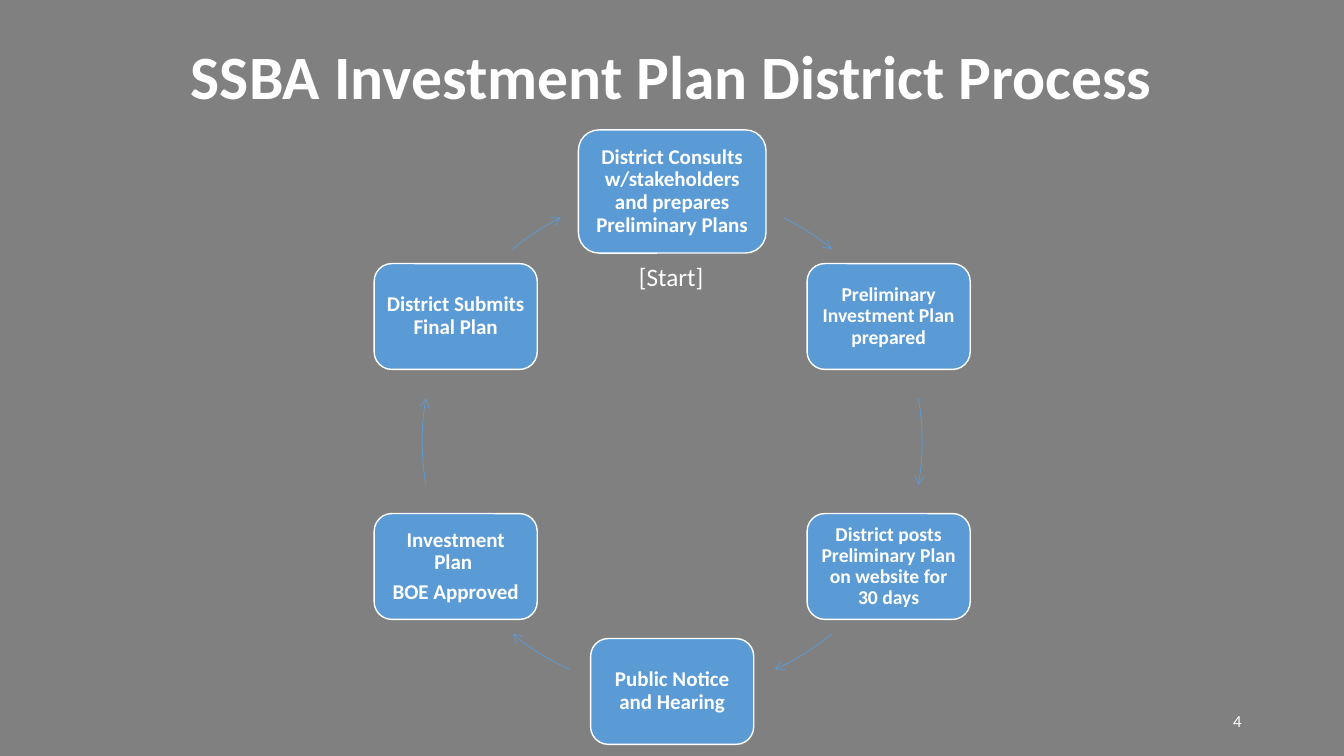
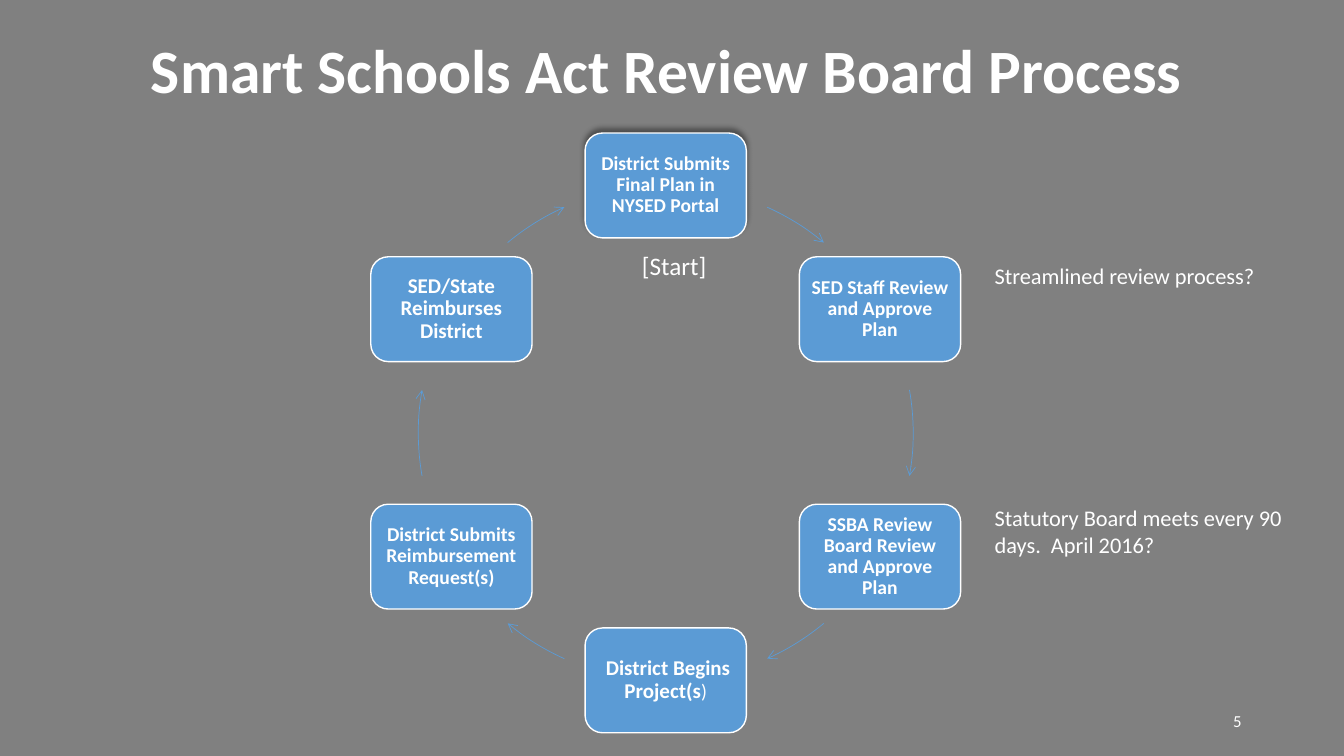
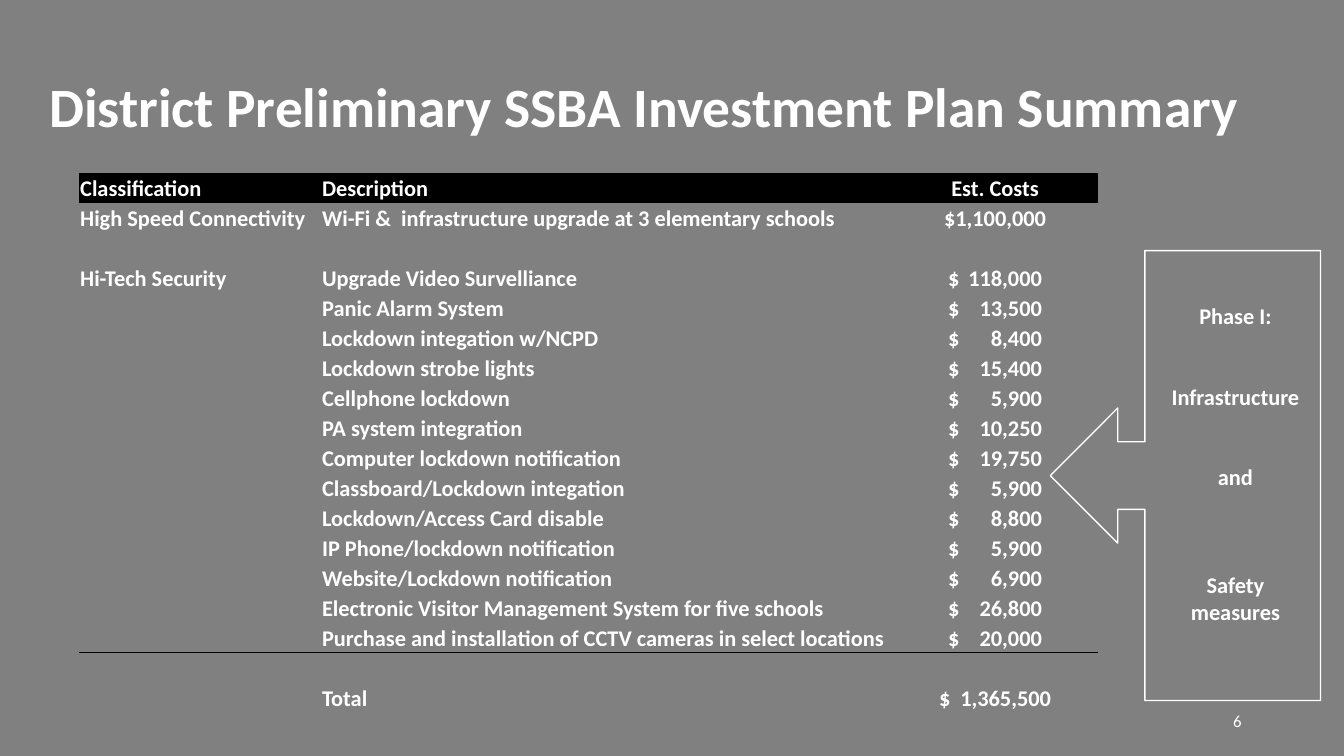
from dataclasses import dataclass
from math import cos, radians, sin

from lxml import etree
from pptx import Presentation
from pptx.dml.color import RGBColor
from pptx.enum.shapes import MSO_SHAPE
from pptx.enum.text import MSO_ANCHOR, PP_ALIGN
from pptx.oxml.ns import qn
from pptx.util import Pt

ARC = MSO_SHAPE.ARC
CALLOUT = MSO_SHAPE.LEFT_ARROW_CALLOUT
ROUNDED = MSO_SHAPE.ROUNDED_RECTANGLE
LEFT, CENTER, RIGHT = PP_ALIGN.LEFT, PP_ALIGN.CENTER, PP_ALIGN.RIGHT
TOP, MIDDLE, BOTTOM = MSO_ANCHOR.TOP, MSO_ANCHOR.MIDDLE, MSO_ANCHOR.BOTTOM
PLAIN_TABLE = "{2D5ABB26-0587-4C30-8999-92F81FD0307C}"


@dataclass(frozen=True)
class Theme:
    """Colours and type sizes shared by the slides."""

    font: str = "Calibri"
    ground: RGBColor = RGBColor(0x80, 0x80, 0x80)
    ink: RGBColor = RGBColor(0xFF, 0xFF, 0xFF)
    accent: RGBColor = RGBColor(0x5B, 0x9B, 0xD5)
    rule: RGBColor = RGBColor(0, 0, 0)
    title: float = 44
    title_small: float = 39.6
    label: float = 18
    body: float = 16
    step: float = 15
    step_small: float = 14
    number: float = 12
    tight: float = 0.9


THEME = Theme()

DISTRICT_STEPS = [
    (["District Consults w/stakeholders and prepares Preliminary Plans"], THEME.step),
    (["Preliminary Investment Plan prepared"], THEME.step_small),
    (["District posts Preliminary Plan on website for 30 days"], THEME.step_small),
    (["Public Notice and Hearing"], THEME.step),
    (["Investment Plan ", "BOE Approved"], THEME.step),
    (["District Submits Final Plan"], THEME.step),
]
BOARD_STEPS = [
    (["District Submits Final Plan in NYSED Portal"], THEME.step_small),
    (["SED Staff Review and Approve Plan"], THEME.step_small),
    (["SSBA Review Board Review and Approve Plan"], THEME.step_small),
    ([[(" ", {}), ("District Begins Project(s", {}),
       (")", {"size": Pt(THEME.step_small), "bold": False})]], THEME.step),
    (["District Submits Reimbursement Request(s)"], THEME.step_small),
    (["SED/State Reimburses District"], THEME.step),
]
COSTS = [
    ("Classification", "Description", "Est. Costs"),
    ("High Speed Connectivity", "Wi-Fi &  infrastructure upgrade at 3 elementary schools",
     "$1,100,000"),
    ("", "", ""),
    ("Hi-Tech Security", "Upgrade Video Survelliance", "$\t118,000"),
    ("", "Panic Alarm System", "$\t13,500"),
    ("", "Lockdown integation w/NCPD", "$\t8,400"),
    ("", "Lockdown strobe lights", "$\t15,400"),
    ("", "Cellphone lockdown", "$\t5,900"),
    ("", "PA system integration", "$\t10,250"),
    ("", "Computer lockdown notification", "$\t19,750"),
    ("", "Classboard/Lockdown integation", "$\t5,900"),
    ("", "Lockdown/Access Card disable", "$\t8,800"),
    ("", "IP Phone/lockdown notification", "$\t5,900"),
    ("", "Website/Lockdown notification", "$\t6,900"),
    ("", "Electronic Visitor Management System for five schools", "$\t26,800"),
    ("", "Purchase and installation of CCTV cameras in select locations", "$\t20,000"),
    ("", "", ""),
    ("", "Total", "$\t1,365,500"),
]


def apply(target, formats):
    """Set each named attribute of the target."""
    for name, value in formats.items():
        setattr(target, name, value)


def add_xml(parent, tag, **attributes):
    """Append a drawing element with the given attributes."""
    values = {name: str(value) for name, value in attributes.items()}
    return etree.SubElement(parent, qn(tag), values)


def write(frame, paras, size, bold=False, align=LEFT, anchor=TOP,
          spacing=1.0, gaps=(), **frame_formats):
    """Write paragraphs, each a string or a list of spans, into a text frame."""
    apply(frame, {"word_wrap": True, "vertical_anchor": anchor, **frame_formats})
    for index, content in enumerate(paras):
        para = frame.paragraphs[0] if index == 0 else frame.add_paragraph()
        before = gaps[index - 1] if index and gaps else 0
        apply(para, {"alignment": align, "line_spacing": spacing, "space_before": Pt(before)})
        spans = [(content, {})] if isinstance(content, str) else content
        for text, changes in spans:
            span = para.add_run()
            span.text = text
            apply(span.font, {"name": THEME.font, "size": Pt(size), "bold": bold, **changes})
            span.font.color.rgb = THEME.ink


def add_text(page, box, paras, size, **formats):
    """Place a text box."""
    area = page.shapes.add_textbox(*map(Pt, box))
    write(area.text_frame, paras, size, **formats)


def add_outline(page, kind, box, line, width, fill=None):
    """Place a preset shape without a shadow."""
    shape = page.shapes.add_shape(kind, *map(Pt, box))
    shape.shadow.inherit = False
    shape.line.color.rgb = line
    shape.line.width = Pt(width)
    if fill is None:
        shape.fill.background()
    else:
        shape.fill.solid()
        shape.fill.fore_color.rgb = fill
    return shape


def add_page(deck, number, title, box, size=THEME.title, align=CENTER):
    """Add a slide with its title and number."""
    page = deck.slides.add_slide(deck.slide_layouts[6])
    add_text(page, box, [title], size, bold=True, align=align, anchor=MIDDLE,
             spacing=THEME.tight)
    add_text(page, (678, 500.4, 216, 28.8), [str(number)], THEME.number,
             align=RIGHT, anchor=MIDDLE)
    return page


def add_glow(shape):
    """Give a shape a soft shadow above its top edge."""
    effects = shape._element.spPr.find(qn("a:effectLst"))
    shadow = add_xml(effects, "a:outerShdw", blurRad=Pt(4), dist=Pt(3),
                     dir=270 * 60000, algn="b", rotWithShape=0)
    color = add_xml(shadow, "a:srgbClr", val=THEME.rule)
    add_xml(color, "a:alpha", val=40000)


def add_cycle(page, ring, steps, node, first_node, first_angle):
    """Place steps clockwise round a ring, joined by arc arrows."""
    left, top, diameter = ring
    radius = diameter / 2
    nodes = []
    for index, (paras, size) in enumerate(steps):
        angle = radians(index * 360 / len(steps) - 90)
        width, height = node if index else first_node
        box = (left + radius * (1 + cos(angle)) - width / 2,
               top + radius * (1 + sin(angle)) - height / 2, width, height)
        shape = add_outline(page, ROUNDED, box, THEME.ink, 1, THEME.accent)
        inset = Pt(4.3)
        write(shape.text_frame, paras, size, bold=True, align=CENTER, anchor=MIDDLE,
              spacing=THEME.tight, gaps=[5] * len(paras), margin_left=inset,
              margin_right=inset, margin_top=inset, margin_bottom=inset)
        nodes.append(shape)
    right_side = [(first_angle, 39.7), (80, 100), (140.3, 155.8)]
    left_side = [(204.2, 219.7), (260, 280), (320.3, 360 - first_angle)]
    for sweep in right_side + left_side:
        arrow = add_outline(page, ARC, (left, top, diameter, diameter), THEME.accent, 0.5)
        for index, angle in enumerate(sweep):
            arrow.adjustments[index] = (angle - 90) % 360 * 0.6
        add_xml(arrow.line._get_or_add_ln(), "a:tailEnd", type="arrow")
    return nodes


def add_cell_rule(cell):
    """Draw a thin rule under a table cell."""
    edge = etree.Element(qn("a:lnB"), w=str(Pt(0.5)))
    fill = add_xml(edge, "a:solidFill")
    add_xml(fill, "a:srgbClr", val=THEME.rule)
    cell._tc.get_or_add_tcPr().insert(0, edge)


def fill_cell(cell, text, width, align):
    """Write a cell; a tab sets the amount flush right in a centred span."""
    apply(cell, {"margin_left": Pt(0.7), "margin_right": Pt(0.7), "margin_top": Pt(0.7),
                 "margin_bottom": 0, "vertical_anchor": BOTTOM})
    para = cell.text_frame.paragraphs[0]
    if not text:
        add_xml(para._p, "a:endParaRPr", sz=THEME.body * 100)
        return
    if "\t" in text:
        span = 80 if len(text) > 10 else 67
        cell.margin_left = Pt((width - span) / 2)
        align = LEFT
        stops = add_xml(para._p.get_or_add_pPr(), "a:tabLst")
        add_xml(stops, "a:tab", pos=Pt(span), algn="r")
    write(cell.text_frame, [text], THEME.body, bold=True, align=align, anchor=BOTTOM)


def add_cost_table(page, box, rows, widths):
    """Place the cost table with a dark header and a rule above the total."""
    frame = page.shapes.add_table(len(rows), len(widths), *map(Pt, box))
    table = frame.table
    apply(table, {"first_row": False, "horz_banding": False})
    table._tbl.tblPr.find(qn("a:tableStyleId")).text = PLAIN_TABLE
    for column, width in zip(table.columns, widths):
        column.width = Pt(width)
    for index, values in enumerate(rows):
        table.rows[index].height = Pt(box[3] / len(rows))
        for place, text in enumerate(values):
            cell = table.cell(index, place)
            fill_cell(cell, text, widths[place], CENTER if place == 2 else LEFT)
            if index == 0:
                cell.fill.solid()
                cell.fill.fore_color.rgb = THEME.rule
            else:
                cell.fill.background()
            if index == len(rows) - 3:
                add_cell_rule(cell)


def add_phase_callout(page, box):
    """Place the arrow callout that names the phase."""
    shape = add_outline(page, CALLOUT, box, THEME.ink, 1)
    write(shape.text_frame, ["Phase I:", "Infrastructure", "and", "Safety measures"],
          THEME.body, bold=True, align=CENTER, gaps=(38.5, 38.5, 58),
          margin_left=Pt(17), margin_right=Pt(13), margin_top=Pt(36.7))


def build_district_process(deck):
    """Build the district process slide."""
    page = add_page(deck, 4, "SSBA Investment Plan District Process", (66, 23, 828, 67))
    add_cycle(page, (301.6, 136.8, 357.1), DISTRICT_STEPS, (116.5, 75.6), (134, 88), 26.4)
    add_text(page, (449.3, 182.9, 61.2, 28.8), ["[Start]"], THEME.label, word_wrap=False)


def build_board_process(deck):
    """Build the review board process slide."""
    page = add_page(deck, 5, "Smart Schools Act Review Board Process", (62.6, 15, 828, 75))
    node = (115.2, 74.9)
    nodes = add_cycle(page, (298.8, 132.5, 353.5), BOARD_STEPS, node, node, 24.2)
    add_glow(nodes[0])
    add_text(page, (703.4, 183.6, 228, 26.6), ["Streamlined review process?"], THEME.body)
    add_text(page, (703.4, 356.7, 243.4, 46),
             ["Statutory Board meets every 90 days.  April 2016?"], THEME.body)
    add_text(page, (451.4, 175, 61.2, 28.8), ["[Start]"], THEME.label, word_wrap=False)


def build_plan_summary(deck):
    """Build the cost summary slide."""
    page = add_page(deck, 6, "District Preliminary SSBA Investment Plan Summary",
                    (28, 38, 923, 81), THEME.title_small, LEFT)
    add_cost_table(page, (56.6, 123.4, 728, 385.9), COSTS, (172.8, 407.6, 147.6))
    add_phase_callout(page, (750.2, 179, 193, 321.4))


def main():
    """Build and save the deck."""
    deck = Presentation()
    apply(deck, {"slide_width": Pt(960), "slide_height": Pt(540)})
    ground = deck.slide_master.background.fill
    ground.solid()
    ground.fore_color.rgb = THEME.ground
    for build in (build_district_process, build_board_process, build_plan_summary):
        build(deck)
    deck.save("out.pptx")


if __name__ == "__main__":
    main()
